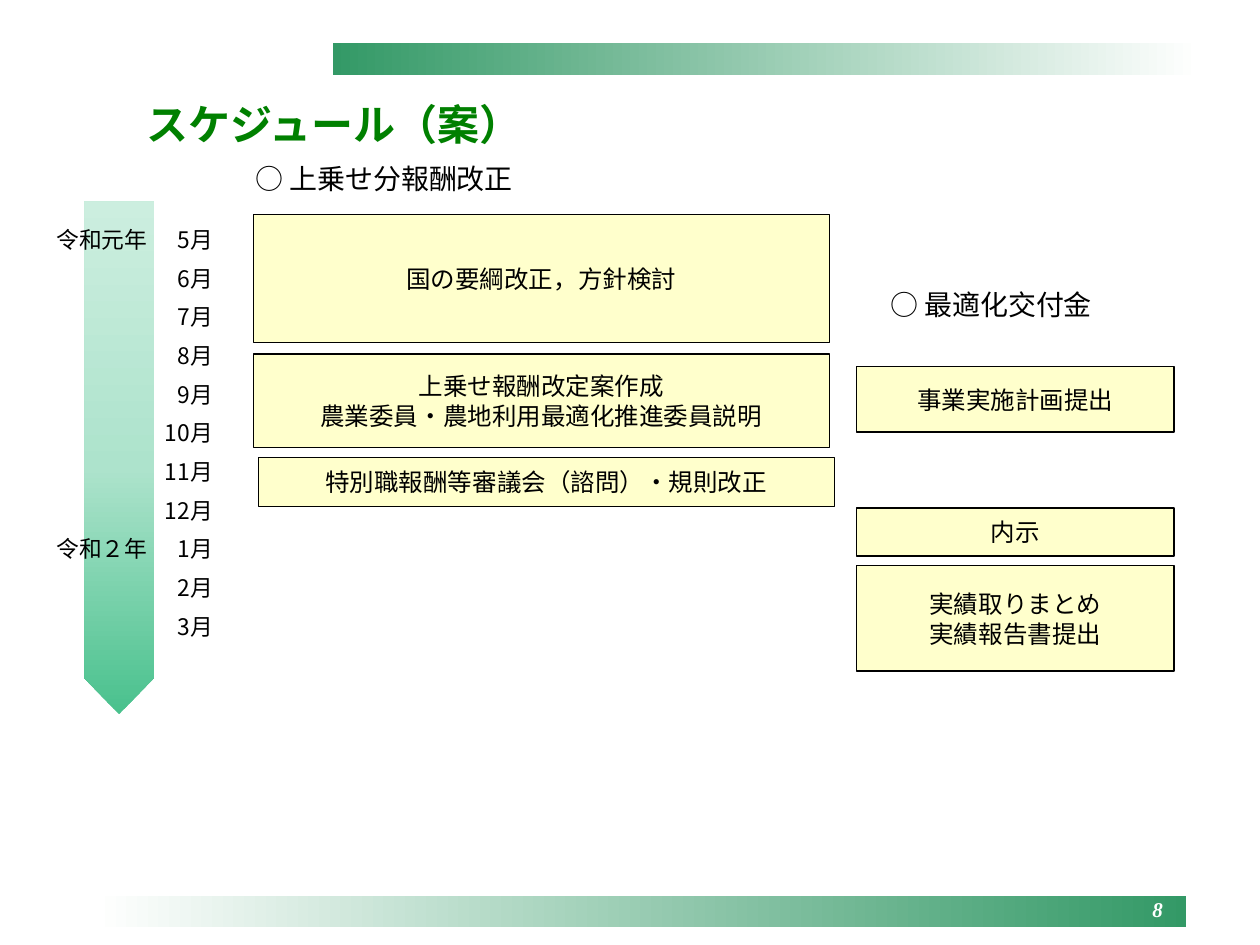
from dataclasses import dataclass

from lxml.etree import SubElement
from pptx import Presentation
from pptx.dml.color import RGBColor
from pptx.enum.shapes import MSO_SHAPE as Kind
from pptx.enum.text import MSO_ANCHOR as Anchor, PP_ALIGN as Align
from pptx.oxml.ns import qn
from pptx.util import Cm, Pt


@dataclass(frozen=True)
class Theme:
    sans: str = "Noto Sans CJK JP"
    serif: str = "Times New Roman"
    ink: str = "000000"
    white: str = "FFFFFF"
    green: str = "008000"
    card: str = "FFFFCC"
    band: tuple = ((0, "339966"), (100, "FFFFFF"))
    foot: tuple = ((0, "FFFFFF"), (100, "339966"))
    arrow: tuple = ((0, "49C18D"), (48, "ADE3CC"), (100, "CCEEDF"))
    title: float = 24
    head: float = 16
    body: float = 14
    month: float = 13
    page: float = 12


T = Theme()


def place(box):
    return [Cm(n) for n in box]


def style(par, size, color=T.ink, face=T.sans, bold=False, italic=False):
    font = par.font
    font.size, font.name = Pt(size), face
    font.bold, font.italic = bold, italic
    font.color.rgb = RGBColor.from_string(color)
    props = par._p.pPr.find(qn("a:defRPr"))
    SubElement(props, qn("a:ea"), typeface=T.sans)


def shade(shape, stops, angle=0):
    """Fill a shape with a linear gradient and take away its outline."""
    shape.shadow.inherit = False
    shape.line.fill.background()
    shape.fill.gradient()
    grad = shape._element.spPr.find(qn("a:gradFill"))
    grad.set("rotWithShape", "1")
    for child in list(grad):
        grad.remove(child)
    group = SubElement(grad, qn("a:gsLst"))
    for pos, color in stops:
        stop = SubElement(group, qn("a:gs"), pos=str(pos * 1000))
        SubElement(stop, qn("a:srgbClr"), val=color)
    SubElement(grad, qn("a:lin"), ang=str(angle * 60000), scaled="0")


def add_band(slide, box, stops):
    shade(slide.shapes.add_shape(Kind.RECTANGLE, *place(box)), stops)


def add_text(slide, box, text, size, align=Align.LEFT, **look):
    frame = slide.shapes.add_textbox(*place(box)).text_frame
    frame.word_wrap = True
    frame.vertical_anchor = Anchor.MIDDLE
    frame.text = text
    par = frame.paragraphs[0]
    par.alignment = align
    style(par, size, **look)


def add_title(slide, box, text):
    title = slide.shapes.title
    title.left, title.top, title.width, title.height = place(box)
    frame = title.text_frame
    frame.text = text
    frame.vertical_anchor = Anchor.MIDDLE
    par = frame.paragraphs[0]
    par.alignment = Align.LEFT
    style(par, T.title, T.green, T.serif, bold=True)


def add_arrow(slide, box):
    """Turn a pentagon a quarter so that it points down and fills the box."""
    x, y, w, h = box
    flat = (x + (w - h) / 2, y + (h - w) / 2, h, w)
    arrow = slide.shapes.add_shape(Kind.PENTAGON, *place(flat))
    arrow.rotation = 90
    arrow.adjustments[0] = 0.52
    shade(arrow, T.arrow, 180)


def add_months(slide, box):
    frame = slide.shapes.add_textbox(*place(box)).text_frame
    frame.word_wrap = True
    frame.margin_top = 0
    years = {5: "令和元年", 1: "令和２年"}
    months = [*range(5, 13), *range(1, 4)]
    frame.text = "\n".join(f"{years.get(m, '')}\t{m}月" for m in months)
    for par in frame.paragraphs:
        par.line_spacing = Pt(22.1)
        tabs = SubElement(par._p.get_or_add_pPr(), qn("a:tabLst"))
        SubElement(tabs, qn("a:tab"), pos=str(Cm(3.15)), algn="r")
        style(par, T.month)


def add_card(slide, box, text):
    card = slide.shapes.add_shape(Kind.RECTANGLE, *place(box))
    card.shadow.inherit = False
    card.fill.solid()
    card.fill.fore_color.rgb = RGBColor.from_string(T.card)
    card.line.color.rgb = RGBColor.from_string(T.ink)
    card.line.width = Pt(0.75)
    frame = card.text_frame
    frame.word_wrap = False
    frame.vertical_anchor = Anchor.MIDDLE
    frame.text = text
    for par in frame.paragraphs:
        par.alignment = Align.CENTER
        par.line_spacing = Pt(17)
        style(par, T.body)


def add_track(slide, box, head, cards):
    """Place a heading at the top of the box and cards at offsets below it."""
    x, y, w, h = box
    add_text(slide, (x, y, w, h), head, T.head)
    for dx, dy, wide, high, text in cards:
        add_card(slide, (x + dx, y + dy, wide, high), text)


def main():
    deck = Presentation()
    deck.slide_width, deck.slide_height = Cm(25.4), Cm(19.05)
    slide = deck.slides.add_slide(deck.slide_layouts[5])

    add_band(slide, (6.71, 0.86, 17.48, 0.66), T.band)
    add_band(slide, (1.9, 18.06, 22.02, 0.63), T.foot)
    add_text(slide, (18.69, 17.93, 5, 0.81), "8", T.page, Align.RIGHT,
             color=T.white, face=T.serif, bold=True, italic=True)
    add_title(slide, (2.69, 1.85, 21.79, 1.27), "スケジュール（案）")
    add_arrow(slide, (1.7, 4.06, 1.4, 10.34))
    add_months(slide, (0.89, 4.32, 4.39, 9.98))

    wide, slim = 11.61, 6.4
    add_track(slide, (4.9, 3.12, 5.99, 0.94), "○ 上乗せ分報酬改正", [
        (0.21, 1.2, wide, 2.59, "国の要綱改正，方針検討"),
        (0.21, 4.02, wide, 1.88,
         "上乗せ報酬改定案作成\v農業委員・農地利用最適化推進委員説明"),
        (0.31, 6.1, wide, 0.99, "特別職報酬等審議会（諮問）・規則改正"),
    ])
    add_track(slide, (17.7, 5.66, 5.23, 0.94), "○ 最適化交付金", [
        (-0.43, 1.73, slim, 1.32, "事業実施計画提出"),
        (-0.43, 4.58, slim, 0.97, "内示"),
        (-0.43, 5.74, slim, 2.13, "実績取りまとめ\n実績報告書提出"),
    ])
    deck.save("out.pptx")


if __name__ == "__main__":
    main()
